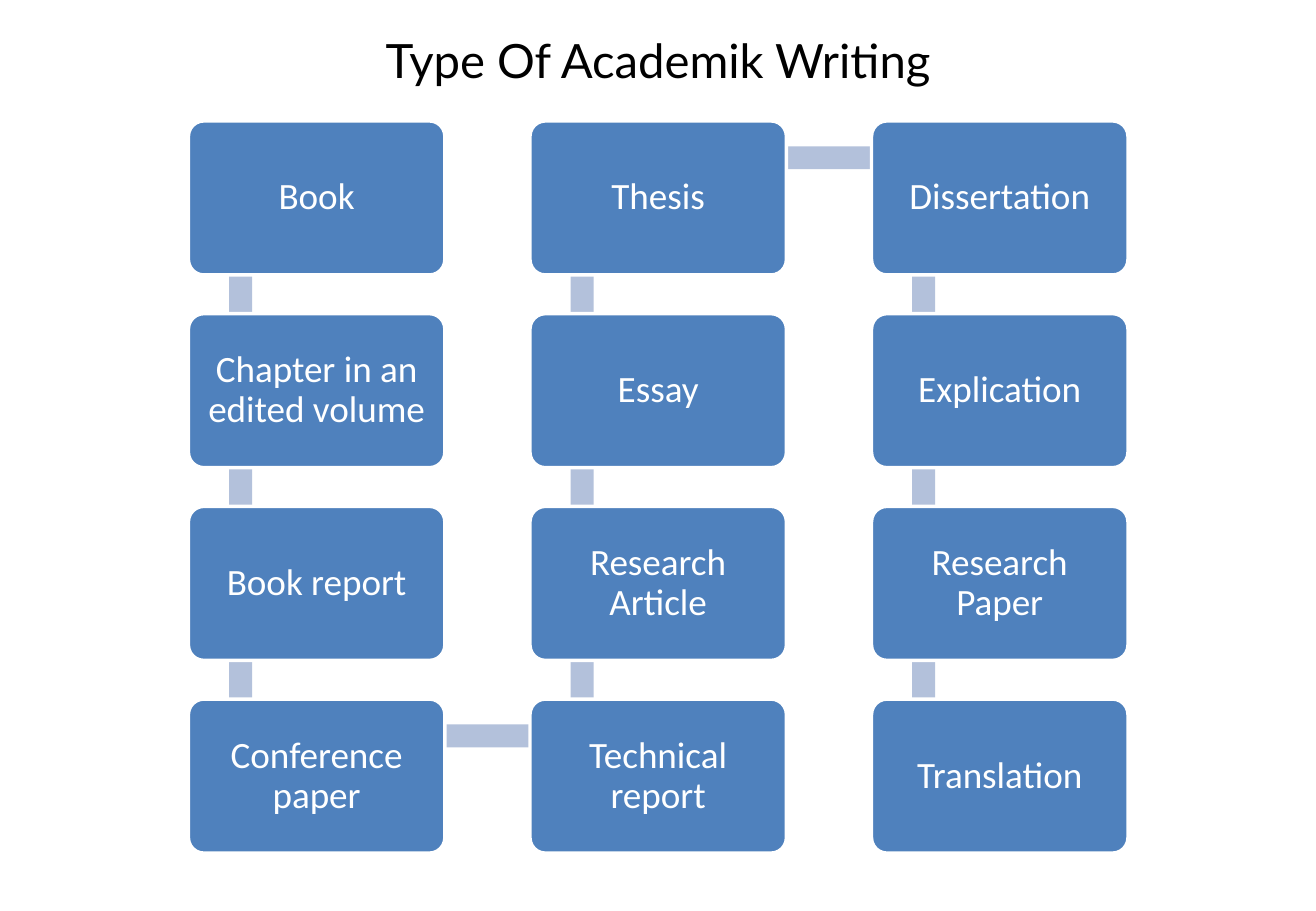
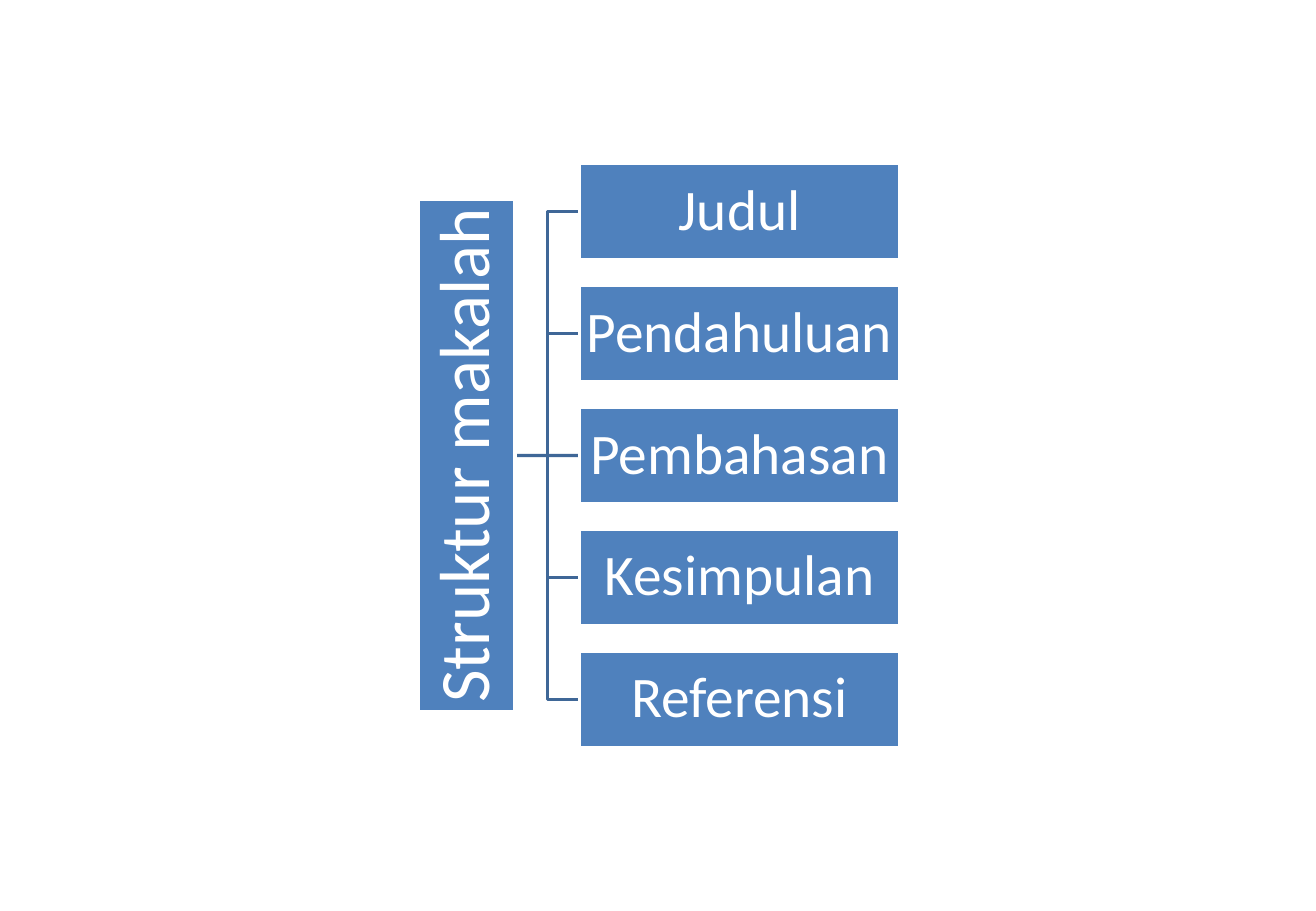
from lxml import etree
from pptx import Presentation
from pptx.dml.color import RGBColor
from pptx.enum import shapes, text
from pptx.oxml.ns import qn
from pptx.util import Cm, Pt

COLOURS = {"box": "4F81BD", "bar": "B3C1DB", "branch": "3F6797",
           "light": "FFFFFF", "dark": "000000"}
TITLE_ONLY, BLANK = 5, 6
SLIDE_W, SLIDE_H = 27.51, 19.05

# Writing types, one column after the other, each from top to bottom
WRITING_TYPES = [
    ["Book", "Chapter in an edited volume", "Book report", "Conference paper"],
    ["Thesis", "Essay", "Research Article", "Technical report"],
    ["Dissertation", "Explication", "Research Paper", "Translation"],
]
PAPER_PARTS = ["Judul", "Pendahuluan", "Pembahasan", "Kesimpulan", "Referensi"]


def colour(name):
    return RGBColor.from_string(COLOURS[name])


def apply(target, formats):
    for name, value in formats.items():
        setattr(target, name, value)


def write(shape, words, size, font="Calibri", ink="light", inset=0.23, spacing=0.9):
    """Put one centred paragraph in the shape."""
    frame = shape.text_frame
    margin = Cm(inset)
    apply(frame, {"word_wrap": True, "auto_size": text.MSO_AUTO_SIZE.NONE,
                  "vertical_anchor": text.MSO_ANCHOR.MIDDLE,
                  "margin_left": margin, "margin_right": margin,
                  "margin_top": margin, "margin_bottom": margin})
    para = frame.paragraphs[0]
    apply(para, {"alignment": text.PP_ALIGN.CENTER, "line_spacing": spacing})
    span = para.add_run()
    span.text = words
    apply(span.font, {"name": font, "size": Pt(size)})
    span.font.color.rgb = colour(ink)


def add_block(page, kind, left, top, width, height, fill):
    block = page.shapes.add_shape(kind, Cm(left), Cm(top), Cm(width), Cm(height))
    block.shadow.inherit = False
    block.fill.solid()
    block.fill.fore_color.rgb = colour(fill)
    block.line.fill.background()
    return block


def add_box(page, kind, left, top, width, height, words, size, inset=0.23):
    """Filled box with a white outline and white text."""
    box = add_block(page, kind, left, top, width, height, "box")
    box.line.color.rgb = colour("light")
    box.line.width = Pt(2)
    write(box, words, size, inset=inset)
    return box


def add_branch(page, kind, parent, child):
    """Line from the parent's right side to the child's left, behind the boxes."""
    branch = page.shapes.add_connector(kind, 0, 0, 0, 0)
    branch.begin_connect(parent, 3)
    branch.end_connect(child, 1)
    branch.line.color.rgb = colour("branch")
    branch.line.width = Pt(2)
    element = branch.element
    etree.SubElement(element.spPr, qn("a:effectLst"))
    element.getparent().insert(2, element)


def build_writing_types(deck):
    page = deck.slides.add_slide(deck.slide_layouts[TITLE_ONLY])
    title = page.shapes.title
    apply(title, {"left": 0, "top": Cm(0.53), "width": Cm(SLIDE_W), "height": Cm(1.45)})
    write(title, "Type Of Academik Writing", 28, "Lato", "dark", spacing=1.0)

    left, top, width, height = 3.94, 2.53, 5.36, 3.22
    column_step, row_step = 7.14, 4.03
    bar, bar_x, bar_y = 0.48, 1.09, 0.77
    last_row = len(WRITING_TYPES[0]) - 1

    # Bars: down every column, then across at the bottom and at the top
    for column in range(len(WRITING_TYPES)):
        x = left + column * column_step + bar_x
        for row in range(last_row):
            y = top + row * row_step + bar_y
            add_block(page, shapes.MSO_SHAPE.RECTANGLE, x - bar / 2, y,
                      bar, row_step, "bar")
        if column < len(WRITING_TYPES) - 1:
            turn_row = last_row if column % 2 == 0 else 0
            y = top + turn_row * row_step + bar_y
            add_block(page, shapes.MSO_SHAPE.RECTANGLE, x, y - bar / 2,
                      column_step, bar, "bar")

    # Boxes
    for column, names in enumerate(WRITING_TYPES):
        for row, name in enumerate(names):
            box = add_box(page, shapes.MSO_SHAPE.ROUNDED_RECTANGLE,
                          left + column * column_step, top + row * row_step,
                          width, height, name, 22)
            box.adjustments[0] = 0.1


def build_paper_structure(deck):
    page = deck.slides.add_slide(deck.slide_layouts[BLANK])
    thickness, step, root_height = 2.03, 2.55, 10.72
    middle = len(PAPER_PARTS) // 2
    rectangle = shapes.MSO_SHAPE.RECTANGLE

    # Upright root box, centred on the slide's height
    root = add_box(page, rectangle, 8.74, (SLIDE_H - root_height) / 2,
                   thickness, root_height, "Struktur makalah", 42, 0.07)
    root.element.find(".//" + qn("a:bodyPr")).set("vert", "vert270")

    # Parts and their branches
    for index, name in enumerate(PAPER_PARTS):
        top = (SLIDE_H - thickness) / 2 + (index - middle) * step
        part = add_box(page, rectangle, 12.12, top, 6.68, thickness, name, 34, 0.05)
        kind = shapes.MSO_CONNECTOR.STRAIGHT if index == middle else shapes.MSO_CONNECTOR.ELBOW
        add_branch(page, kind, root, part)


def main():
    deck = Presentation()
    apply(deck, {"slide_width": Cm(SLIDE_W), "slide_height": Cm(SLIDE_H)})
    build_writing_types(deck)
    build_paper_structure(deck)
    deck.save("out.pptx")


if __name__ == "__main__":
    main()
